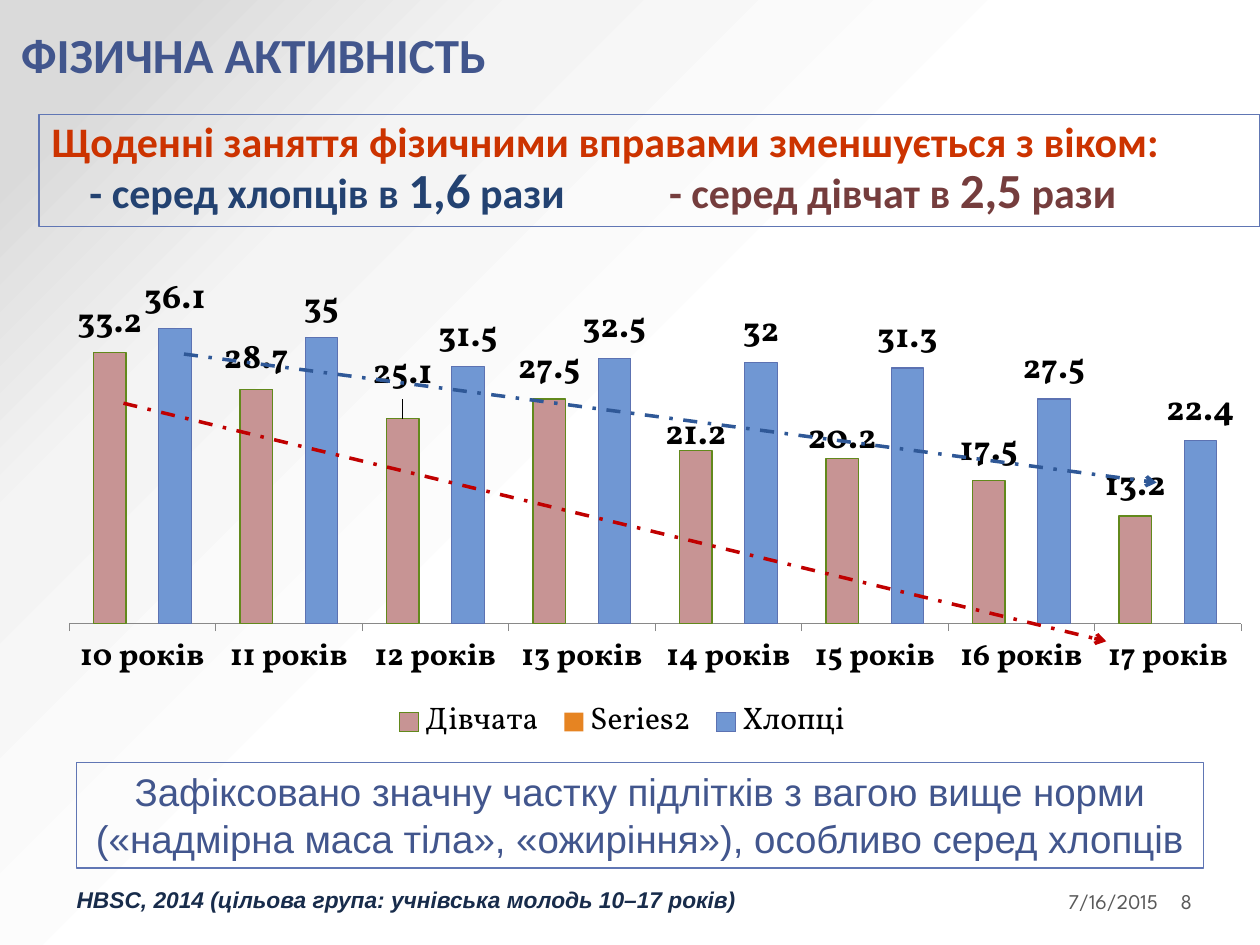
from dataclasses import dataclass

from pptx import Presentation
from pptx import util as u
from pptx.chart.data import CategoryChartData
from pptx.dml.color import RGBColor
from pptx.enum import chart as charts, dml, shapes, text
from pptx.oxml import parse_xml
from pptx.oxml.ns import nsdecls, qn
from lxml import etree

Inches, Pt = u.Inches, u.Pt
rgb = RGBColor.from_string


@dataclass(frozen=True)
class Theme:
    heading: str = "42568D"
    alert: str = "CC3300"
    boys_text: str = "234271"
    girls_text: str = "753D3D"
    source: str = "182C4B"
    footer: str = "595959"
    chart_text: str = "000000"
    axis: str = "898989"
    frame: str = "6076B4"
    boys_trend: str = "2F5897"
    girls_trend: str = "C00000"
    title_size: int = 28
    lead_size: int = 24
    conclusion_size: int = 22
    label_size: int = 20
    chart_size: int = 18
    source_size: int = 13
    footer_size: int = 12


theme = Theme()


def apply(target, formats):
    for name, value in formats.items():
        setattr(target, name, value)


def write(shape, paragraphs, frame_format=None, paragraph_format=None):
    """Fill a shape with paragraphs, each a list of (text, font, size, colour, extra)."""
    frame = shape.text_frame
    apply(frame, {"word_wrap": True, "vertical_anchor": text.MSO_ANCHOR.TOP,
                  **(frame_format or {})})
    for index, runs in enumerate(paragraphs):
        paragraph = frame.paragraphs[0] if index == 0 else frame.add_paragraph()
        apply(paragraph, {"alignment": text.PP_ALIGN.LEFT, **(paragraph_format or {})})
        for words, font, size, color, extra in runs:
            run = paragraph.add_run()
            run.text = words
            apply(run.font, {"name": font, "size": Pt(size), **extra})
            run.font.color.rgb = rgb(color)


presentation = Presentation()
apply(presentation, {"slide_width": Inches(10), "slide_height": Inches(7.5)})
slide = presentation.slides.add_slide(presentation.slide_layouts[6])
bold = {"bold": True}

# Background: grey in the top left corner, white elsewhere
slide.background.fill.gradient()
gradient = slide.background._cSld.find(".//" + qn("a:gradFill"))
stops = "".join(f'<a:gs pos="{position * 1000}"><a:srgbClr val="{color}"/></a:gs>'
                for position, color in ((50, "FFFFFF"), (76, "F4F4F4"), (92, "DADADA")))
gradient.getparent().replace(gradient, parse_xml(
    f'<a:gradFill {nsdecls("a")} rotWithShape="1"><a:gsLst>{stops}</a:gsLst>'
    '<a:path path="circle"><a:fillToRect l="100000" t="100000"/></a:path></a:gradFill>'))

# Title
title = slide.shapes.add_textbox(Inches(0.07), Inches(0.08), Inches(9.69), Inches(0.64))
write(title, [[("ФІЗИЧНА АКТИВНІСТЬ", "Calibri", theme.title_size, theme.heading, bold)]],
      {"vertical_anchor": text.MSO_ANCHOR.BOTTOM}, {"line_spacing": 0.9})

# Chart: an empty, unnamed middle series keeps the two groups apart
chart_data = CategoryChartData()
chart_data.categories = [f"{age} років" for age in range(10, 18)]
chart_data.add_series("Дівчата", (33.2, 28.7, 25.1, 27.5, 21.2, 20.2, 17.5, 13.2))
chart_data.add_series("", (None,) * 8)
chart_data.add_series("Хлопці", (36.1, 35, 31.5, 32.5, 32, 31.3, 27.5, 22.4))
chart = slide.shapes.add_chart(
    charts.XL_CHART_TYPE.COLUMN_CLUSTERED, Inches(0.2), Inches(2.18),
    Inches(9.69), Inches(3.94), chart_data).chart
apply(chart, {"has_title": False, "has_legend": True})
apply(chart.font, {"name": "Vollkorn", "size": Pt(theme.chart_size)})
chart.font.color.rgb = rgb(theme.chart_text)
apply(chart.legend, {"position": charts.XL_LEGEND_POSITION.BOTTOM, "include_in_layout": False})
apply(chart.value_axis, {"visible": False, "has_major_gridlines": False,
                         "minimum_scale": 0, "maximum_scale": 41.7})
apply(chart.category_axis, {"major_tick_mark": charts.XL_TICK_MARK.OUTSIDE})
chart.category_axis.tick_labels.font.bold = True
chart.category_axis.format.line.color.rgb = rgb(theme.axis)
plot = chart.plots[0]
apply(plot, {"gap_width": 150, "overlap": 0, "vary_by_categories": False})

label_format = {"name": "Vollkorn", "size": Pt(theme.label_size), "bold": True}
label_place = {"position": charts.XL_LABEL_POSITION.OUTSIDE_END}
all_series = list(plot.series)
girls, spacer, boys = all_series
series_styles = (("C79494", "62891C"), ("E68422", None), ("7097D3", "5C72B2"))
for series, (fill, outline) in zip(all_series, series_styles):
    series.format.fill.solid()
    series.format.fill.fore_color.rgb = rgb(fill)
    if outline:
        series.format.line.color.rgb = rgb(outline)
        series.format.line.width = Pt(0.75)
        labels = series.data_labels
        apply(labels, {"show_value": True, **label_place})
        apply(labels.font, label_format)
        labels.font.color.rgb = rgb(theme.chart_text)

# Three girls' labels are nudged, as shares of the chart
for point, shift_x, shift_y in ((2, 0.0, -0.03), (4, 0.0, 0.03), (5, 0.0, 0.02)):
    label = girls.points[point].data_label
    apply(label, label_place)
    apply(label.font, label_format)
    label.font.color.rgb = rgb(theme.chart_text)
    label._dLbl.find(qn("c:idx")).addnext(parse_xml(
        f'<c:layout {nsdecls("c")}><c:manualLayout><c:x val="{shift_x}"/>'
        f'<c:y val="{shift_y}"/></c:manualLayout></c:layout>'))

# The spacer has no name, and the boys come first in the series order
spacer._element.remove(spacer._element.find(qn("c:tx")))
for order, series in enumerate((boys, girls, spacer)):
    series._element.find(qn("c:order")).set("val", str(order))

# Fixed places for the plot area and the legend, as shares of the chart
plot_area = chart._chartSpace.chart.plotArea
for parent, after, target, box in (
        (plot_area, None, '<c:layoutTarget val="inner"/>', (0.036, 0.005, 0.96, 0.695)),
        (chart.legend._element, "c:legendPos", "", (0.294, 0.845, 0.39, 0.11))):
    for old in parent.findall(qn("c:layout")):
        parent.remove(old)
    places = "".join(f'<c:{key} val="{value}"/>' for key, value in zip("xywh", box))
    layout = parse_xml(
        f'<c:layout {nsdecls("c")}><c:manualLayout>{target}<c:xMode val="edge"/>'
        f'<c:yMode val="edge"/>{places}</c:manualLayout></c:layout>')
    if after:
        parent.find(qn(after)).addnext(layout)
    else:
        parent.insert(0, layout)

# Framed texts: key finding above the chart, conclusion below it
frames = []
for left, top, width, height in ((0.31, 0.91, 9.69, 0.89), (0.61, 6.05, 8.94, 0.84)):
    shape = slide.shapes.add_shape(shapes.MSO_SHAPE.RECTANGLE, Inches(left), Inches(top),
                                   Inches(width), Inches(height))
    shape.shadow.inherit = False
    shape.fill.background()
    shape.line.color.rgb = rgb(theme.frame)
    shape.line.width = Pt(0.75)
    frames.append(shape)
finding, conclusion = frames

rates = []
for group, ratio, color in (("- серед хлопців в ", "1,6", theme.boys_text),
                            ("\t\t- серед дівчат в ", "2,5", theme.girls_text)):
    rates += [(group, "Calibri", theme.lead_size, color, bold),
              (ratio, "Calibri", theme.title_size, color, bold),
              (" рази", "Calibri", theme.lead_size, color, bold)]
write(finding, [[("Щоденні заняття фізичними вправами зменшується з віком:",
                  "Calibri", theme.lead_size, theme.alert, bold)], rates],
      {"margin_left": 0}, {"line_spacing": 0.9})
for paragraph, indent in zip(finding.text_frame.paragraphs, (0.1, 0.4)):
    properties = paragraph._p.get_or_add_pPr()
    properties.set("marL", "0")
    properties.set("indent", str(Inches(indent)))
tabs = etree.SubElement(properties, qn("a:tabLst"))
for stop in (4.5, 5):
    etree.SubElement(tabs, qn("a:tab"), pos=str(Inches(stop)), algn="l")

write(conclusion, [[("Зафіксовано значну частку підлітків з вагою вище норми "
                     "(«надмірна маса тіла», «ожиріння»), особливо серед хлопців",
                     "Arial", theme.conclusion_size, theme.heading, {})]],
      paragraph_format={"alignment": text.PP_ALIGN.CENTER})

# Trend arrows
for start_x, start_y, end_x, end_y, color in ((0.98, 3.2, 8.78, 5.09, theme.girls_trend),
                                              (1.46, 2.81, 9.18, 3.83, theme.boys_trend)):
    arrow = slide.shapes.add_connector(shapes.MSO_CONNECTOR.STRAIGHT, Inches(start_x),
                                       Inches(start_y), Inches(end_x), Inches(end_y))
    arrow.line.color.rgb = rgb(color)
    apply(arrow.line, {"width": Pt(2), "dash_style": dml.MSO_LINE.DASH_DOT})
    etree.SubElement(arrow.line._get_or_add_ln(), qn("a:tailEnd"), type="arrow")
    etree.SubElement(arrow._element.spPr, qn("a:effectLst"))

# Source, date and slide number
source = slide.shapes.add_textbox(Inches(0.51), Inches(6.98), Inches(6.46), Inches(0.32))
write(source, [[("HBSC, 2014 (цільова група: учнівська молодь 10–17 років)", "Arial",
                 theme.source_size, theme.source, {"bold": True, "italic": True})]])
for words, left, width, inset_left, alignment in (
        ("7/16/2015", 6.96, 2.28, 0.1, text.PP_ALIGN.RIGHT),
        ("8", 9.34, 0.61, 0.03, text.PP_ALIGN.LEFT)):
    footer = slide.shapes.add_textbox(Inches(left), Inches(6.95), Inches(width), Inches(0.4))
    write(footer, [[(words, "League Spartan", theme.footer_size, theme.footer, {})]],
          {"vertical_anchor": text.MSO_ANCHOR.MIDDLE, "margin_left": Inches(inset_left),
           "margin_right": Inches(0.05)}, {"alignment": alignment})

presentation.save("out.pptx")
